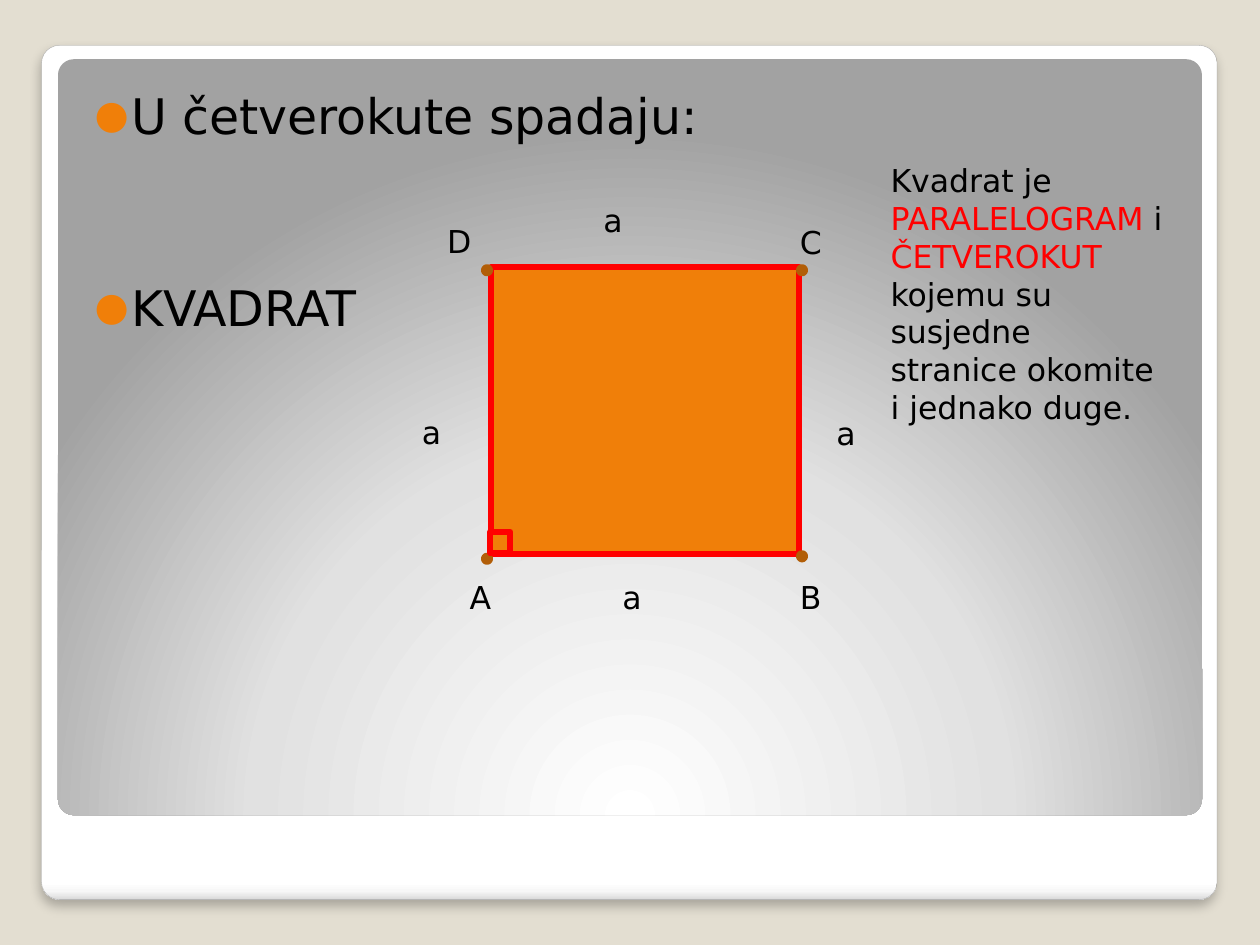
import pptx
import pptx.util
import pptx.dml.color
import pptx.enum.shapes
import pptx.enum.text
import pptx.oxml
from pptx.oxml.ns import nsdecls, qn
from dataclasses import dataclass
from pptx.util import Inches, Pt


@dataclass(frozen=True)
class Theme:
    font: str = "DejaVu Sans"
    backdrop: str = "E3DED1"
    frame_edge: str = "A4A4A4"
    text: str = "000000"
    accent: str = "FF0000"
    orange: str = "F07F09"
    vertex: str = "B25E07"
    body_size: int = 28
    label_size: int = 18
    outline: float = 3.35


THEME = Theme()
SHAPES = pptx.enum.shapes.MSO_SHAPE
AUTO_SIZE = pptx.enum.text.MSO_AUTO_SIZE
FRAME_STOPS = [(0, "FFFFFF"), (98, "FFFFFF"), (99, "F7F7F7"), (100, "DADADA")]
PANEL_STOPS = [(0, "FFFFFF"), (55, "E1E1E1"), (100, "A2A2A2")]
LINEAR_DOWN = '<a:lin {} ang="5400000" scaled="0"/>'
CIRCLE_FROM_BELOW = ('<a:path {} path="circle"><a:fillToRect l="50000" t="175000" '
                     'r="50000" b="-75000"/></a:path>')


def rgb(value):
    return pptx.dml.color.RGBColor.from_string(value)


def xml(template):
    return pptx.oxml.parse_xml(template.format(nsdecls("a")))


def style_font(font, size, color=THEME.text):
    font.name = THEME.font
    font.size = Pt(size)
    font.color.rgb = rgb(color)


def add_figure(slide, kind, box, fill=None, line=None, width=THEME.outline):
    figure = slide.shapes.add_shape(kind, *map(Inches, box))
    figure.shadow.inherit = False
    if fill:
        figure.fill.solid()
        figure.fill.fore_color.rgb = rgb(fill)
    if line:
        figure.line.color.rgb = rgb(line)
        figure.line.width = Pt(width)
    else:
        figure.line.fill.background()
    return figure


def add_rounded_card(slide, box, stops, direction, line=None):
    card = add_figure(slide, SHAPES.ROUNDED_RECTANGLE, box, line=line, width=0.16)
    card.adjustments[0] = 0.021
    card.fill.gradient()
    gradient = card._element.spPr.find(qn("a:gradFill"))
    for child in list(gradient):
        gradient.remove(child)
    stop_list = xml("<a:gsLst {}/>")
    for position, color in stops:
        stop_list.append(xml(f'<a:gs {{}} pos="{position * 1000}">'
                             f'<a:srgbClr val="{color}"/></a:gs>'))
    gradient.append(stop_list)
    gradient.append(xml(direction))
    return card


def add_soft_shadow(card):
    effects = card._element.spPr.find(qn("a:effectLst"))
    effects.append(xml(
        f'<a:outerShdw {{}} blurRad="{Pt(6)}" dist="{Pt(4)}" dir="5400000" algn="tl" '
        'rotWithShape="0"><a:srgbClr val="000000"><a:alpha val="25000"/>'
        '</a:srgbClr></a:outerShdw>'))


def add_text(slide, box, runs):
    text_box = slide.shapes.add_textbox(*map(Inches, box))
    frame = text_box.text_frame
    frame.word_wrap = True
    frame.auto_size = AUTO_SIZE.SHAPE_TO_FIT_TEXT
    paragraph = frame.paragraphs[0]
    style_font(paragraph.font, THEME.label_size)
    for text, color in runs:
        run = paragraph.add_run()
        run.text = text
        if color != THEME.text:
            run.font.color.rgb = rgb(color)


def add_bullet(paragraph):
    properties = paragraph._p.get_or_add_pPr()
    properties.set("marL", str(Inches(0.29)))
    properties.set("indent", str(Inches(-0.29)))
    bullet_parts = (
        f'<a:buClr {{}}><a:srgbClr val="{THEME.orange}"/></a:buClr>',
        '<a:buSzPct {} val="80000"/>',
        f'<a:buFont {{}} typeface="{THEME.font}"/>',
        '<a:buChar {} char="●"/>',
    )
    default_run = properties.find(qn("a:defRPr"))
    for part in bullet_parts:
        default_run.addprevious(xml(part))


def fill_body(body, items):
    body.left, body.top, body.width, body.height = map(Inches, (0.55, 0.58, 8.95, 4.58))
    frame = body.text_frame
    frame.margin_left, frame.margin_top = Inches(0.2), Inches(0.1)
    frame.margin_right, frame.margin_bottom = Inches(0.1), Inches(0.05)
    frame.vertical_anchor = pptx.enum.text.MSO_ANCHOR.TOP
    frame.auto_size = AUTO_SIZE.NONE
    for index, (text, space_before) in enumerate(items):
        paragraph = frame.add_paragraph() if index else frame.paragraphs[0]
        paragraph.text = text
        paragraph.space_before = Pt(space_before)
        style_font(paragraph.font, THEME.body_size)
        add_bullet(paragraph)


def main():
    deck = pptx.Presentation()
    deck.slide_width, deck.slide_height = Inches(10), Inches(7.5)
    slide = deck.slides.add_slide(deck.slide_layouts[1])
    slide.background.fill.solid()
    slide.background.fill.fore_color.rgb = rgb(THEME.backdrop)
    title, body = slide.shapes.title, slide.placeholders[1]
    title._element.getparent().remove(title._element)

    # Framed backdrop, kept behind the body text
    frame = add_rounded_card(slide, (0.33, 0.36, 9.33, 6.78), FRAME_STOPS,
                             LINEAR_DOWN, THEME.frame_edge)
    add_soft_shadow(frame)
    panel = add_rounded_card(slide, (0.46, 0.47, 9.08, 6), PANEL_STOPS, CIRCLE_FROM_BELOW)
    for card in (frame, panel):
        body._element.addprevious(card._element)

    # Bulleted list
    fill_body(body, [("U četverokute spadaju:", 2.5), ("KVADRAT", 76)])

    # Square with its vertices and right-angle mark
    add_figure(slide, SHAPES.RECTANGLE, (3.9, 2.12, 2.44, 2.28), THEME.orange, THEME.accent)
    for left, top in ((3.84, 4.41), (6.34, 4.39), (3.84, 2.12), (6.34, 2.12)):
        add_figure(slide, SHAPES.OVAL, (left, top, 0.05, 0.05), THEME.orange, THEME.vertex)
    add_figure(slide, SHAPES.RECTANGLE, (3.89, 4.22, 0.16, 0.17), THEME.orange, THEME.accent)

    # Side and vertex labels
    labels = [
        ("a", 4.69, 1.55, 0.55), ("a", 3.25, 3.23, 0.47),
        ("a", 6.54, 3.24, 0.39), ("a", 4.84, 4.54, 0.55),
        ("A", 3.63, 4.54, 0.34), ("B", 6.25, 4.54, 0.31),
        ("C", 6.25, 1.72, 0.47), ("D", 3.45, 1.71, 0.6),
    ]
    for letter, left, top, width in labels:
        add_text(slide, (left, top, width, 0.4), [(letter, THEME.text)])

    # Definition
    add_text(slide, (6.97, 1.23, 2.36, 2.22), [
        ("Kvadrat je ", THEME.text),
        ("PARALELOGRAM ", THEME.accent),
        ("i ", THEME.text),
        ("ČETVEROKUT ", THEME.accent),
        ("kojemu su susjedne stranice okomite i jednako duge.", THEME.text),
    ])

    deck.save("out.pptx")


if __name__ == "__main__":
    main()
